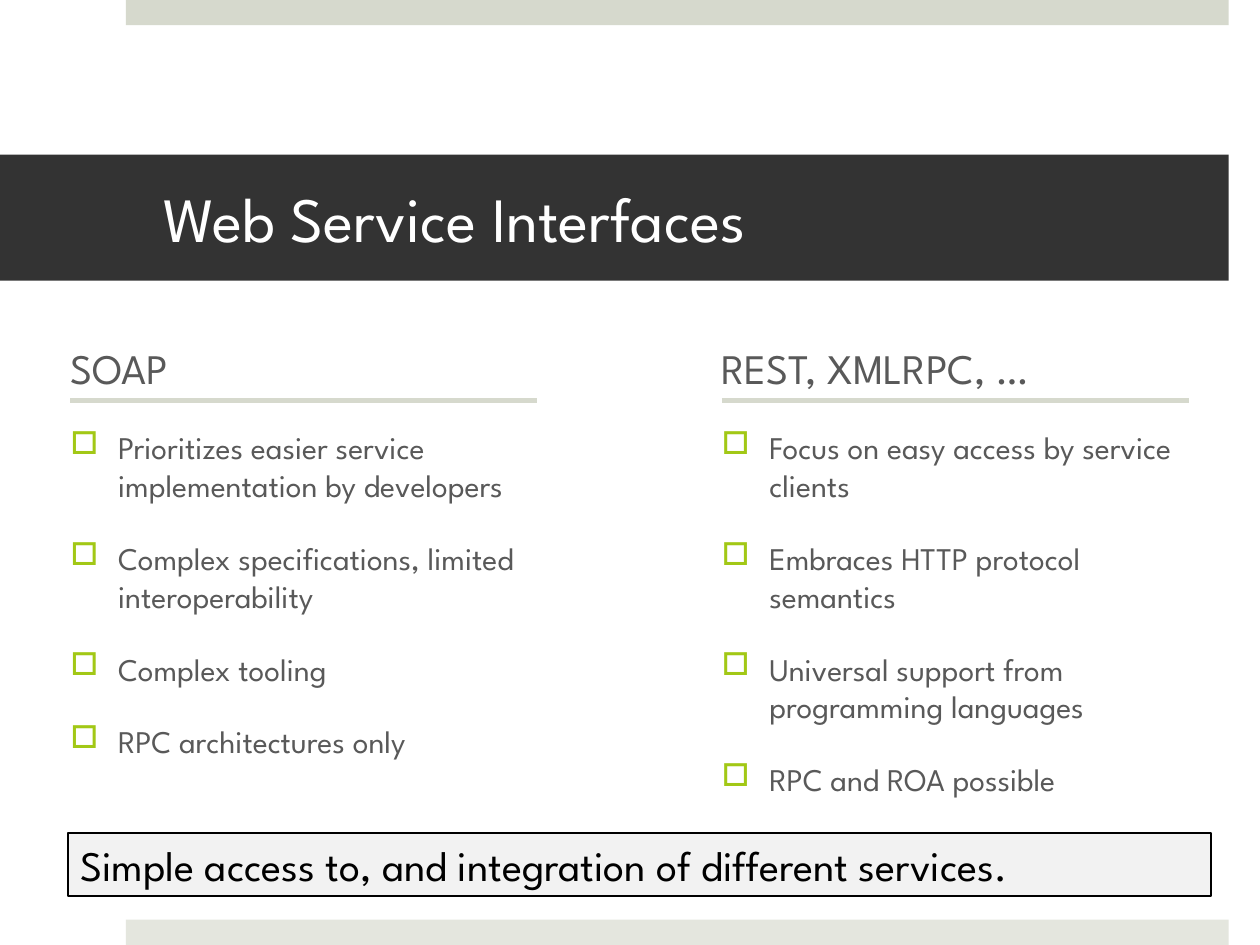
from lxml.etree import SubElement
from pptx import Presentation
from pptx.dml.color import RGBColor
from pptx.enum.shapes import MSO_CONNECTOR, MSO_SHAPE
from pptx.enum.text import MSO_ANCHOR as Anchor, PP_ALIGN
from pptx.oxml.ns import qn
from pptx.util import Cm, Pt

TITLE = "Web Service Interfaces"
COLUMNS = [
    ("SOAP", [
        "Prioritizes easier service implementation by developers",
        "Complex specifications, limited interoperability",
        "Complex tooling",
        "RPC architectures only",
    ]),
    ("REST, XMLRPC, …", [
        "Focus on easy access by service clients",
        "Embraces HTTP protocol semantics",
        "Universal support from programming languages",
        "RPC and ROA possible",
    ]),
]
SUMMARY = "Simple access to, and integration of different services."

FONT = "League Spartan"
BLACK = RGBColor(0, 0, 0)
WHITE = RGBColor(255, 255, 255)
DARK = RGBColor(0x33, 0x33, 0x33)
GREY = RGBColor(0x59, 0x59, 0x59)
PALE = RGBColor(0xF2, 0xF2, 0xF2)
SAGE = RGBColor(0xD6, 0xD9, 0xCD)
LIGHT_SAGE = RGBColor(0xE4, 0xE6, 0xDE)
GREEN = RGBColor(0xA2, 0xC8, 0x16)

WIDTH, HEIGHT = 25.4, 19.05
RIGHT_EDGE = 24.77
STRIP_LEFT, STRIP_HEIGHT = 2.54, 0.51
COLUMN_LEFT, COLUMN_STEP, COLUMN_WIDTH = 1.17, 13.13, 9.91
INSET = 0.25
RULE_TOP = 8.08
BULLET_INDENT = 0.96


def add_bullet(paragraph):
    properties = paragraph._p.get_or_add_pPr()
    properties.set("marL", str(Cm(BULLET_INDENT)))
    properties.set("indent", str(-Cm(BULLET_INDENT)))
    color = SubElement(properties, qn("a:buClr"))
    SubElement(color, qn("a:srgbClr"), val=str(GREEN))
    SubElement(properties, qn("a:buChar"), char="□")


def write_text(shape, texts, size, color, anchor=Anchor.TOP, before=0,
               bullets=False, left=INSET, right=INSET):
    frame = shape.text_frame
    frame.word_wrap = True
    frame.vertical_anchor = anchor
    frame.margin_left, frame.margin_right = Cm(left), Cm(right)
    for index, text in enumerate(texts):
        paragraph = frame.add_paragraph() if index else frame.paragraphs[0]
        paragraph.alignment = PP_ALIGN.LEFT
        paragraph.space_before = Pt(before)
        if bullets:
            add_bullet(paragraph)
        run = paragraph.add_run()
        run.text = text
        run.font.name = FONT
        run.font.size = Pt(size)
        run.font.color.rgb = color


def add_box(slide, left, top, width, height, fill, line=None):
    box = slide.shapes.add_shape(
        MSO_SHAPE.RECTANGLE, Cm(left), Cm(top), Cm(width), Cm(height))
    box.shadow.inherit = False
    box.fill.solid()
    box.fill.fore_color.rgb = fill
    if line is None:
        box.line.fill.background()
    else:
        box.line.color.rgb = line
        box.line.width = Pt(1)
    return box


def add_rule(slide, left, right):
    rule = slide.shapes.add_connector(
        MSO_CONNECTOR.STRAIGHT, Cm(left), Cm(RULE_TOP), Cm(right), Cm(RULE_TOP))
    rule.line.color.rgb = SAGE
    rule.line.width = Pt(3)
    SubElement(rule._element.spPr, qn("a:effectLst"))


def add_column(slide, left, heading, points):
    add_rule(slide, left + INSET, left + COLUMN_WIDTH - INSET)
    heading_box = slide.shapes.add_textbox(
        Cm(left), Cm(5.61), Cm(COLUMN_WIDTH), Cm(2.44))
    write_text(heading_box, [heading], 24, GREY, anchor=Anchor.BOTTOM, before=20)
    points_box = slide.shapes.add_textbox(
        Cm(left), Cm(8.51), Cm(COLUMN_WIDTH), Cm(8.92))
    write_text(points_box, points, 18, GREY, before=20, bullets=True)


def main():
    presentation = Presentation()
    presentation.slide_width, presentation.slide_height = Cm(WIDTH), Cm(HEIGHT)
    slide = presentation.slides.add_slide(presentation.slide_layouts[6])

    for top, fill in [(0, SAGE), (HEIGHT - STRIP_HEIGHT, LIGHT_SAGE)]:
        add_box(slide, STRIP_LEFT, top, RIGHT_EDGE - STRIP_LEFT, STRIP_HEIGHT, fill)

    title = add_box(slide, 0, 3.12, RIGHT_EDGE, 2.54, DARK)
    write_text(title, [TITLE], 36, WHITE, anchor=Anchor.MIDDLE, left=3.3, right=0.76)

    for index, (heading, points) in enumerate(COLUMNS):
        add_column(slide, COLUMN_LEFT + index * COLUMN_STEP, heading, points)

    summary = add_box(slide, 1.37, 16.79, 23.04, 1.27, PALE, line=BLACK)
    write_text(summary, [SUMMARY], 24, BLACK)

    presentation.save("out.pptx")


if __name__ == "__main__":
    main()
